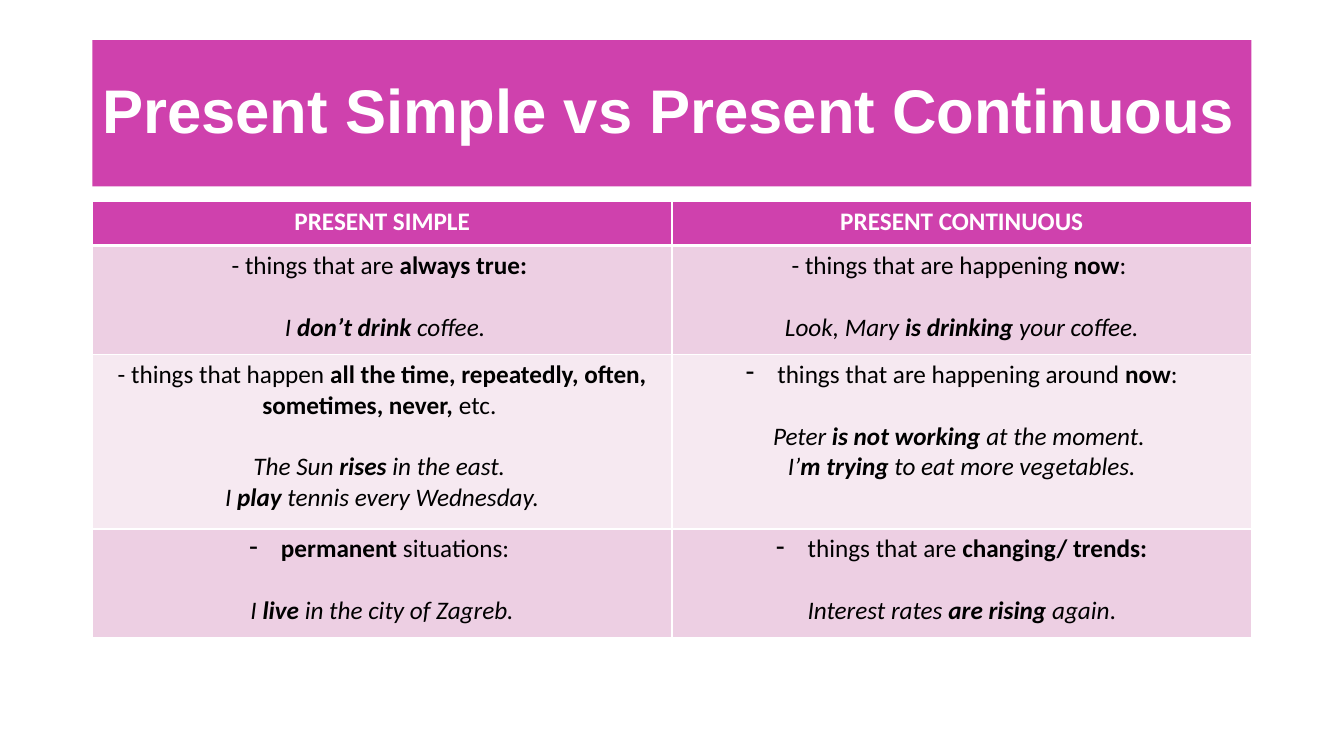
from dataclasses import dataclass

import lxml.etree
import pptx
import pptx.dml.color
import pptx.enum.shapes
import pptx.enum.text
import pptx.oxml.ns
import pptx.util


@dataclass(frozen=True)
class Theme:
    accent: str = "CF41AD"
    dark_band: str = "EDCFE3"
    light_band: str = "F6E9F1"
    white: str = "FFFFFF"
    black: str = "000000"
    title_font: str = "Arial"
    body_font: str = "Calibri"
    title_size: float = 44
    body_size: float = 18
    blank_line: float = 22
    bullet_indent: float = 22.5
    thin_border: float = 1
    thick_border: float = 3


@dataclass(frozen=True)
class Line:
    text: str
    bullet: bool = False
    space_before: float = 0


@dataclass(frozen=True)
class Row:
    height: float
    fill: str
    color: str
    cells: tuple[tuple[Line, ...], ...]


THEME = Theme()
LEFT, WIDTH = 66, 828
TITLE_TOP, TITLE_HEIGHT = 28.75, 104.4
TABLE_TOP = 143.75


def rule(text: str, bullet: bool = False) -> Line:
    return Line(text, bullet)


def example(text: str) -> Line:
    return Line(text, space_before=THEME.blank_line)


ROWS = (
    Row(31.7, THEME.accent, THEME.white, (
        (Line("*PRESENT SIMPLE*"),),
        (Line("*PRESENT CONTINUOUS*"),),
    )),
    Row(77.8, THEME.dark_band, THEME.black, (
        (rule("- things that are *always true: *"),
         example(" _I *don’t drink *coffee._")),
        (rule("- things that are happening *now*: "),
         example("_Look, Mary *is drinking *your coffee._")),
    )),
    Row(124.6, THEME.light_band, THEME.black, (
        (rule("- things that happen *all the time, repeatedly, often, sometimes, never,* etc. "),
         example("_The Sun *rises* in the east. _"),
         Line("_I *play* tennis every Wednesday._")),
        (rule("things that are happening around *now*:", bullet=True),
         example("_Peter *is not working *at the moment. _"),
         Line("_I’*m trying *to eat more vegetables._")),
    )),
    Row(77.8, THEME.dark_band, THEME.black, (
        (rule("*permanent* situations: ", bullet=True),
         example("_I *live* in the city of Zagreb._")),
        (rule("things that are *changing/ trends:*", bullet=True),
         example("_Interest rates *are rising *again_.")),
    )),
)


def rgb(color: str) -> pptx.dml.color.RGBColor:
    return pptx.dml.color.RGBColor.from_string(color)


def add_text(paragraph, text: str, *, font: str, size: float, color: str) -> None:
    """Write text in which *stars* mark bold and _underscores_ mark italic."""
    for italic_index, segment in enumerate(text.split("_")):
        for bold_index, piece in enumerate(segment.split("*")):
            if not piece:
                continue
            run = paragraph.add_run()
            run.text = piece
            run.font.name = font
            run.font.size = pptx.util.Pt(size)
            run.font.bold = bold_index % 2 == 1
            run.font.italic = italic_index % 2 == 1
            run.font.color.rgb = rgb(color)


def add_bullet(paragraph) -> None:
    properties = paragraph._p.get_or_add_pPr()
    indent = pptx.util.Pt(THEME.bullet_indent)
    properties.set("marL", str(indent))
    properties.set("indent", str(-indent))
    bullet = lxml.etree.SubElement(properties, pptx.oxml.ns.qn("a:buChar"))
    bullet.set("char", "-")


def set_borders(cell, top: float, bottom: float) -> None:
    properties = cell._tc.get_or_add_tcPr()
    widths = {"lnL": THEME.thin_border, "lnR": THEME.thin_border, "lnT": top, "lnB": bottom}
    for position, (side, width) in enumerate(widths.items()):
        border = lxml.etree.Element(pptx.oxml.ns.qn(f"a:{side}"), w=str(pptx.util.Pt(width)))
        fill = lxml.etree.SubElement(border, pptx.oxml.ns.qn("a:solidFill"))
        lxml.etree.SubElement(fill, pptx.oxml.ns.qn("a:srgbClr"), val=THEME.white)
        properties.insert(position, border)


def fill_cell(cell, lines: tuple[Line, ...], row: Row) -> None:
    cell.fill.solid()
    cell.fill.fore_color.rgb = rgb(row.fill)
    frame = cell.text_frame
    for index, line in enumerate(lines):
        paragraph = frame.add_paragraph() if index else frame.paragraphs[0]
        paragraph.alignment = pptx.enum.text.PP_ALIGN.CENTER
        if line.space_before:
            paragraph.space_before = pptx.util.Pt(line.space_before)
        if line.bullet:
            add_bullet(paragraph)
        add_text(paragraph, line.text, font=THEME.body_font, size=THEME.body_size, color=row.color)


def add_title(slide) -> None:
    shape = slide.shapes.add_shape(
        pptx.enum.shapes.MSO_SHAPE.RECTANGLE,
        pptx.util.Pt(LEFT), pptx.util.Pt(TITLE_TOP),
        pptx.util.Pt(WIDTH), pptx.util.Pt(TITLE_HEIGHT),
    )
    shape.shadow.inherit = False
    shape.fill.solid()
    shape.fill.fore_color.rgb = rgb(THEME.accent)
    shape.line.fill.background()
    shape.text_frame.word_wrap = True
    shape.text_frame.vertical_anchor = pptx.enum.text.MSO_ANCHOR.MIDDLE
    paragraph = shape.text_frame.paragraphs[0]
    paragraph.alignment = pptx.enum.text.PP_ALIGN.LEFT
    paragraph.line_spacing = 0.9
    add_text(paragraph, "*Present Simple vs Present Continuous*",
             font=THEME.title_font, size=THEME.title_size, color=THEME.white)


def add_comparison(slide) -> None:
    column_count = len(ROWS[0].cells)
    table = slide.shapes.add_table(
        len(ROWS), column_count,
        pptx.util.Pt(LEFT), pptx.util.Pt(TABLE_TOP),
        pptx.util.Pt(WIDTH), pptx.util.Pt(sum(row.height for row in ROWS)),
    ).table
    table.horz_banding = False
    for column in table.columns:
        column.width = pptx.util.Pt(WIDTH / column_count)
    for row_index, row in enumerate(ROWS):
        table.rows[row_index].height = pptx.util.Pt(row.height)
        top = THEME.thick_border if row_index == 1 else THEME.thin_border
        bottom = THEME.thick_border if row_index == 0 else THEME.thin_border
        for column_index, lines in enumerate(row.cells):
            cell = table.cell(row_index, column_index)
            fill_cell(cell, lines, row)
            set_borders(cell, top, bottom)


def main() -> None:
    presentation = pptx.Presentation()
    presentation.slide_width = pptx.util.Pt(960)
    presentation.slide_height = pptx.util.Pt(540)
    slide = presentation.slides.add_slide(presentation.slide_layouts[6])
    add_title(slide)
    add_comparison(slide)
    presentation.save("out.pptx")


if __name__ == "__main__":
    main()
